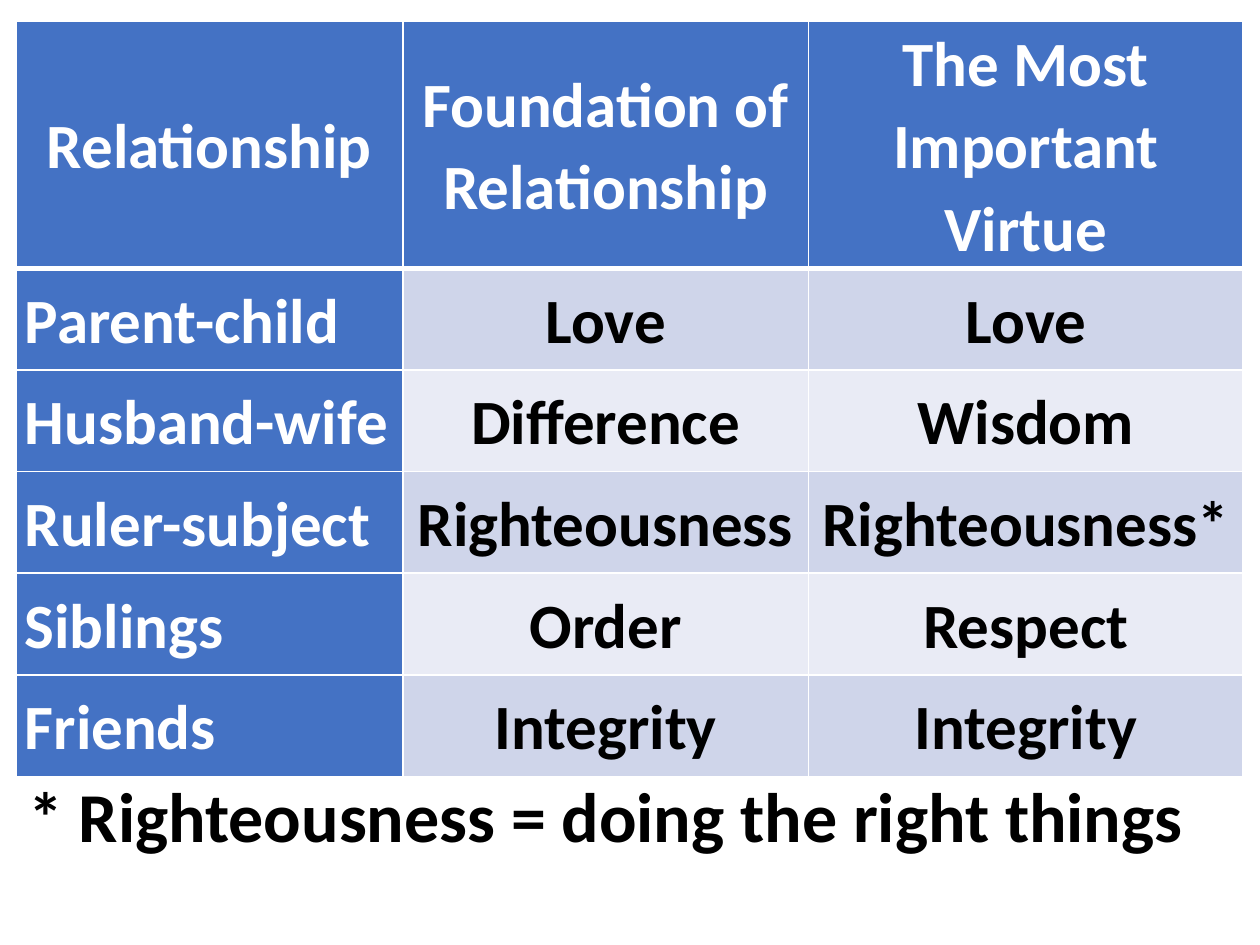
import lxml.etree
import pptx
import pptx.dml.color
import pptx.enum.text
import pptx.oxml.ns
import pptx.util

Cm = pptx.util.Cm
Pt = pptx.util.Pt
RGBColor = pptx.dml.color.RGBColor
qn = pptx.oxml.ns.qn
PP_ALIGN = pptx.enum.text.PP_ALIGN

WHITE = RGBColor(0xFF, 0xFF, 0xFF)
BLACK = RGBColor(0x00, 0x00, 0x00)
BLUE = RGBColor(0x44, 0x72, 0xC4)
BANDS = (RGBColor(0xCF, 0xD5, 0xEA), RGBColor(0xE9, 0xEB, 0xF5))

RELATIONSHIPS = [
    ("Relationship", "Foundation of Relationship", "The Most Important\nVirtue"),
    ("Parent-child", "Love", "Love"),
    ("Husband-wife", "Difference", "Wisdom"),
    ("Ruler-subject", "Righteousness", "Righteousness*"),
    ("Siblings", "Order", "Respect"),
    ("Friends", "Integrity", "Integrity"),
]
COLUMN_WIDTHS = (7.8, 8.18, 8.76)
ROW_HEIGHT = 2.05


def write_text(frame, text, size=36, color=BLACK, align=PP_ALIGN.LEFT, spacing=None):
    """Fill a text frame with bold Calibri, one paragraph per line of text."""
    frame.text = text
    for paragraph in frame.paragraphs:
        paragraph.alignment = align
        paragraph.line_spacing = spacing
        for run in paragraph.runs:
            run.font.name = "Calibri"
            run.font.size = Pt(size)
            run.font.bold = True
            run.font.color.rgb = color


def set_borders(cell, top, bottom):
    """Draw white cell borders with the given top and bottom widths in points."""
    properties = cell._tc.get_or_add_tcPr()
    widths = {"a:lnL": 1, "a:lnR": 1, "a:lnT": top, "a:lnB": bottom}
    for position, (side, width) in enumerate(widths.items()):
        line = lxml.etree.Element(qn(side), w=str(Pt(width)))
        fill = lxml.etree.SubElement(line, qn("a:solidFill"))
        lxml.etree.SubElement(fill, qn("a:srgbClr"), val=str(WHITE))
        properties.insert(position, line)


def format_cell(cell, text, row, column):
    """Write and style one cell according to its place in the table."""
    is_heading = row == 0 or column == 0
    cell.margin_left = cell.margin_right = Cm(0.18)
    cell.margin_top = cell.margin_bottom = 0
    cell.vertical_anchor = pptx.enum.text.MSO_ANCHOR.MIDDLE
    cell.fill.solid()
    cell.fill.fore_color.rgb = BLUE if is_heading else BANDS[(row - 1) % 2]
    set_borders(cell, top=3 if row == 1 else 1, bottom=3 if row == 0 else 1)
    write_text(
        cell.text_frame,
        text,
        color=WHITE if is_heading else BLACK,
        align=PP_ALIGN.LEFT if row and column == 0 else PP_ALIGN.CENTER,
        spacing=1.07,
    )


def add_relationship_table(slide):
    """Add the table of relationships, foundations and virtues."""
    frame = slide.shapes.add_table(
        len(RELATIONSHIPS), len(COLUMN_WIDTHS),
        Cm(0.32), Cm(0.42), Cm(sum(COLUMN_WIDTHS)), Cm(15.06),
    )
    table = frame.table
    table.first_col = True
    for column, width in zip(table.columns, COLUMN_WIDTHS):
        column.width = Cm(width)
    for row in table.rows:
        row.height = Cm(ROW_HEIGHT)
    frame.height = Cm(15.06)
    for row, texts in enumerate(RELATIONSHIPS):
        for column, text in enumerate(texts):
            format_cell(table.cell(row, column), text, row, column)


def add_footnote(slide):
    """Add the explanation of the starred virtue below the table."""
    footnote = slide.shapes.add_textbox(Cm(0.32), Cm(15.45), Cm(24.05), Cm(1.96))
    footnote.text_frame.word_wrap = False
    footnote.text_frame.auto_size = pptx.enum.text.MSO_AUTO_SIZE.SHAPE_TO_FIT_TEXT
    write_text(footnote.text_frame, "* Righteousness = doing the right things", size=40)


def main():
    """Build and save the slide on relationships and virtues."""
    presentation = pptx.Presentation()
    presentation.slide_width = Cm(25.4)
    presentation.slide_height = Cm(19.05)
    slide = presentation.slides.add_slide(presentation.slide_layouts[6])
    add_relationship_table(slide)
    add_footnote(slide)
    presentation.save("out.pptx")


if __name__ == "__main__":
    main()
